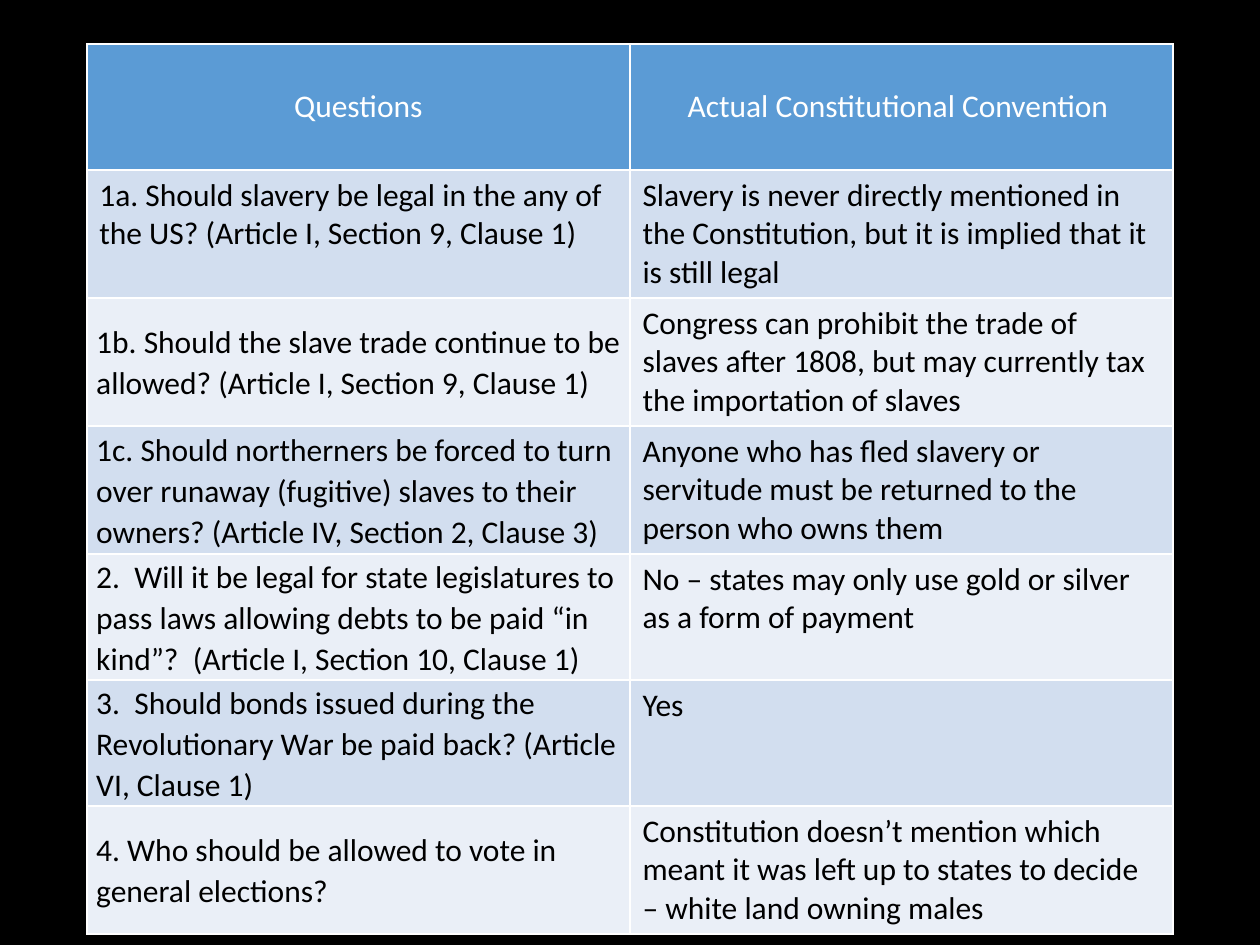
import pptx
import pptx.dml.color
import pptx.enum.text
import pptx.util
from pptx.util import Cm


def color(hex_string):
    return pptx.dml.color.RGBColor.from_string(hex_string)


HEADER_FILL = "5B9BD5"
BAND_FILLS = ["EAEFF7", "D2DEEF"]
ROWS = [
    ("Questions", "Actual Constitutional Convention "),
    ("1a. Should slavery be legal in the any of the US? (Article I, Section 9, Clause 1)",
     "Slavery is never directly mentioned in the Constitution, but it is implied that it is still legal"),
    ("1b. Should the slave trade continue to be allowed? (Article I, Section 9, Clause 1)",
     "Congress can prohibit the trade of slaves after 1808, but may currently tax the importation of slaves"),
    ("1c. Should northerners be forced to turn over runaway (fugitive) slaves to their owners? "
     "(Article IV, Section 2, Clause 3)",
     "Anyone who has fled slavery or servitude must be returned to the person who owns them"),
    ("2.  Will it be legal for state legislatures to pass laws allowing debts to be paid “in kind”?  "
     "(Article I, Section 10, Clause 1)",
     "No – states may only use gold or silver as a form of payment"),
    ("3.  Should bonds issued during the Revolutionary War be paid back? (Article VI, Clause 1)",
     "Yes"),
    ("4. Who should be allowed to vote in general elections?",
     "Constitution doesn’t mention which meant it was left up to states to decide – white land owning males"),
]

deck = pptx.Presentation()
deck.slide_width, deck.slide_height = Cm(25.4), Cm(19.05)
page = deck.slides.add_slide(deck.slide_layouts[6])
page.background.fill.solid()
page.background.fill.fore_color.rgb = color("000000")

# The default table style supplies the white cell borders.
table = page.shapes.add_table(
    len(ROWS), 2, Cm(1.75), Cm(0.89), Cm(21.9), Cm(17.78)).table

for row_index, row in enumerate(ROWS):
    is_header = row_index == 0
    for column_index, text in enumerate(row):
        cell = table.cell(row_index, column_index)
        cell.fill.solid()
        cell.fill.fore_color.rgb = color(HEADER_FILL if is_header else BAND_FILLS[row_index % 2])
        cell.text_frame.text = text
        para = cell.text_frame.paragraphs[0]
        if is_header:
            para.alignment = pptx.enum.text.PP_ALIGN.CENTER
            cell.vertical_anchor = pptx.enum.text.MSO_ANCHOR.MIDDLE
        elif column_index == 0 and row_index > 1:
            cell.vertical_anchor = pptx.enum.text.MSO_ANCHOR.MIDDLE
            cell.margin_left = cell.margin_right = Cm(0.19)
            cell.margin_top = cell.margin_bottom = 0
            para.line_spacing = 1.07
        span = para.runs[0]
        span.font.name = "Calibri"
        span.font.size = pptx.util.Pt(18)
        span.font.bold = False
        span.font.color.rgb = color("FFFFFF" if is_header else "000000")

deck.save("out.pptx")
